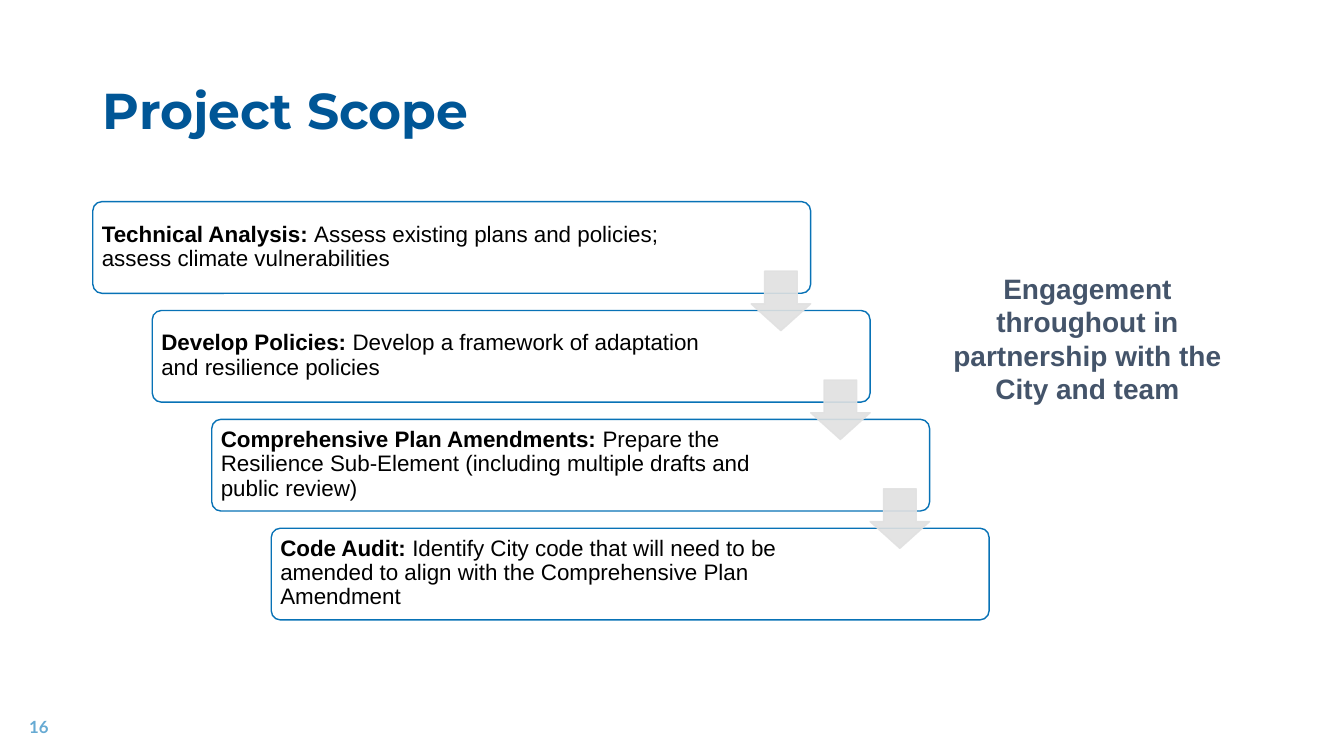
from lxml import etree
from pptx import Presentation
from pptx.dml.color import RGBColor
from pptx.enum.shapes import MSO_SHAPE as Shape
from pptx.enum.text import MSO_ANCHOR as Anchor, PP_ALIGN as Align
from pptx.oxml.ns import qn
from pptx.util import Inches, Pt

NAVY = RGBColor(0x00, 0x56, 0x96)
BLUE = RGBColor(0x08, 0x72, 0xB6)
SKY = RGBColor(0x66, 0xAA, 0xD3)
SLATE = RGBColor(0x44, 0x54, 0x6A)
GREY = RGBColor(0xE1, 0xE1, 0xE1)
BLACK = RGBColor(0x00, 0x00, 0x00)

# Staircase of steps: start, offset per step, box size
LEFT, TOP = 0.92, 2.0
DX, DY = 0.59, 1.08
WIDE, HIGH = 7.12, 0.91
ARROW = 0.59

# Heading, text, text width
STEPS = [
    ("Technical Analysis: ",
     "Assess existing plans and policies; assess climate vulnerabilities", 6.06),
    ("Develop Policies: ",
     "Develop a framework of adaptation and resilience policies", 5.88),
    ("Comprehensive Plan Amendments: ",
     "Prepare the Resilience Sub-Element (including multiple drafts and "
     "public review)", 5.88),
    ("Code Audit: ",
     "Identify City code that will need to be amended to align with the "
     "Comprehensive Plan Amendment", 5.88),
]


def add_run(para, text, size, font, color, bold=True):
    run = para.add_run()
    run.text = text
    run.font.size = Pt(size)
    run.font.name = font
    run.font.bold = bold
    run.font.color.rgb = color


def add_text(slide, x, y, w, h, anchor=Anchor.MIDDLE):
    frame = slide.shapes.add_textbox(
        Inches(x), Inches(y), Inches(w), Inches(h)).text_frame
    frame.word_wrap = True
    frame.vertical_anchor = anchor
    return frame


def add_title(slide, text):
    title = slide.shapes.title
    title.left, title.top = Inches(0.92), Inches(0.4)
    title.width, title.height = Inches(11.5), Inches(1.45)
    title.text_frame.vertical_anchor = Anchor.MIDDLE
    para = title.text_frame.paragraphs[0]
    para.alignment = Align.LEFT
    para.line_spacing = 0.9
    add_run(para, text, 36, "Montserrat", NAVY)


def add_step(slide, x, y, head, text, width):
    box = slide.shapes.add_shape(
        Shape.ROUNDED_RECTANGLE, Inches(x), Inches(y), Inches(WIDE), Inches(HIGH))
    box.shadow.inherit = False
    box.adjustments[0] = 0.1
    box.fill.background()
    box.line.color.rgb = BLUE
    box.line.width = Pt(1)

    frame = add_text(slide, x + 0.02, y + 0.02, width, HIGH - 0.05)
    frame.margin_left = frame.margin_right = Inches(0.07)
    frame.margin_top = frame.margin_bottom = Inches(0.07)
    para = frame.paragraphs[0]
    para.line_spacing = 0.9
    add_run(para, head, 16, "Arial", BLACK)
    add_run(para, text, 16, "Arial", BLACK, bold=False)


def add_arrow(slide, x, y):
    arrow = slide.shapes.add_shape(
        Shape.DOWN_ARROW, Inches(x), Inches(y), Inches(ARROW), Inches(ARROW))
    arrow.shadow.inherit = False
    arrow.adjustments[0] = 0.55
    arrow.adjustments[1] = 0.45
    arrow.fill.solid()
    arrow.fill.fore_color.rgb = GREY
    arrow.line.color.rgb = GREY
    arrow.line.width = Pt(1)
    # 90 % opacity for fill and line
    for color in arrow.fill._xPr.iter(qn("a:srgbClr")):
        etree.SubElement(color, qn("a:alpha")).set("val", "90000")


def main():
    deck = Presentation()
    deck.slide_width, deck.slide_height = Inches(13.33), Inches(7.5)
    slide = deck.slides.add_slide(deck.slide_layouts[5])

    add_title(slide, "Project Scope")

    # Slide number
    frame = add_text(slide, 0.19, 7.01, 3, 0.4)
    add_run(frame.paragraphs[0], "16", 12, "Lato", SKY)

    # Steps, then the arrows that link them
    for i, step in enumerate(STEPS):
        add_step(slide, LEFT + i * DX, TOP + i * DY, *step)
    for i in range(len(STEPS) - 1):
        add_arrow(slide, LEFT + WIDE - ARROW + i * DX, TOP + 0.69 + i * DY)

    # Side note
    frame = add_text(slide, 9.24, 2.64, 3.09, 1.45, Anchor.TOP)
    para = frame.paragraphs[0]
    para.alignment = Align.CENTER
    add_run(para, "Engagement throughout in partnership with the City and team",
            20, "Arial", SLATE)

    deck.save("out.pptx")


if __name__ == "__main__":
    main()
